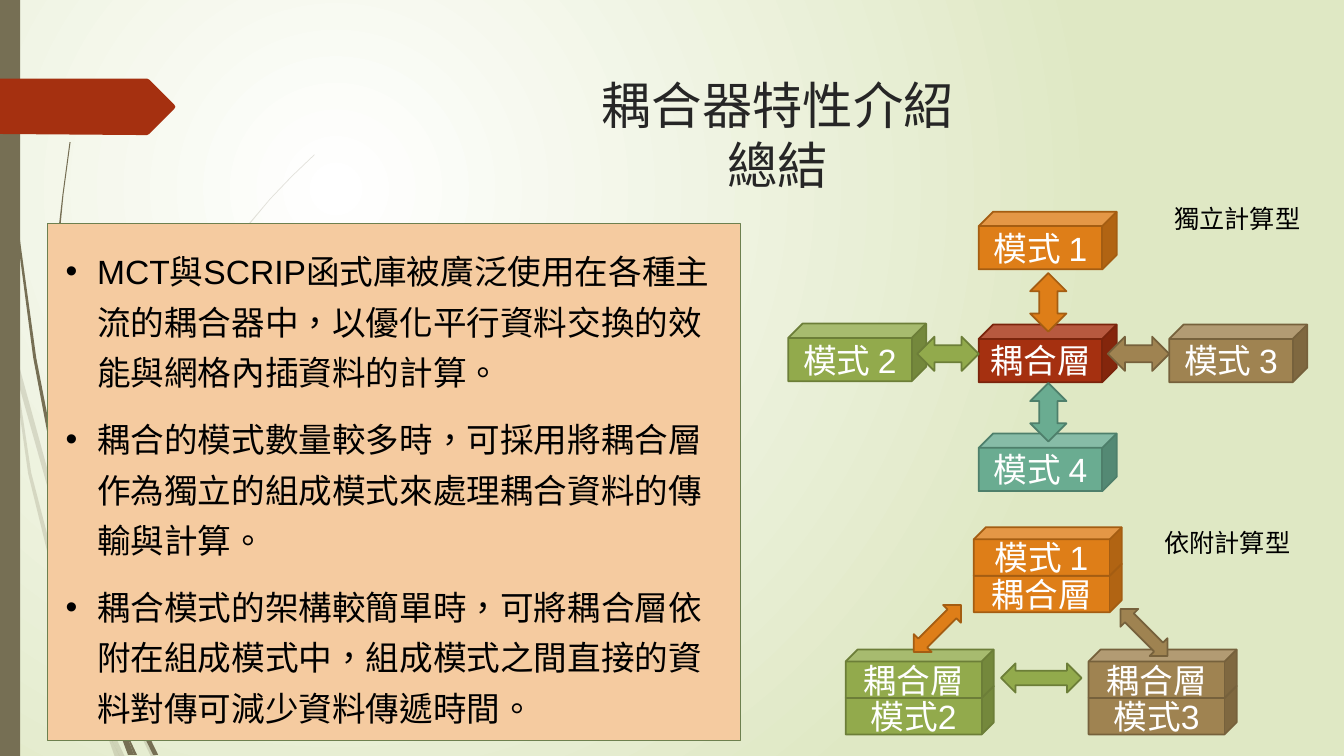
from dataclasses import dataclass

from lxml.etree import SubElement
from pptx import Presentation
from pptx.dml.color import RGBColor
from pptx.enum.lang import MSO_LANGUAGE_ID as Lang
from pptx.enum.shapes import MSO_SHAPE as Preset
from pptx.enum.text import MSO_ANCHOR as Anchor
from pptx.enum.text import MSO_AUTO_SIZE as AutoSize
from pptx.enum.text import PP_ALIGN as Align
from pptx.oxml import parse_xml
from pptx.oxml.ns import nsdecls, qn
from pptx.util import Pt


@dataclass(frozen=True)
class Theme:
    font: str = "Arial"
    title_font: str = "TeX Gyre Adventor"
    title_size: int = 36
    text_size: int = 24
    label_size: int = 18
    title: str = "262626"
    text: str = "000000"
    light: str = "FFFFFF"
    glow: str = "FFFFFF"
    backdrop: str = "DFE8C4"
    stem: str = "766F54"
    tag: str = "A53010"
    panel: tuple = ("F5CBA0", "6D804F")
    orange: tuple = ("DE7E18", "A45D12")
    green: tuple = ("92AA4C", "6C7E38")
    brown: tuple = ("9F8351", "76613C")
    teal: tuple = ("6AAC91", "4E7F6B")
    red: tuple = ("A53010", "7A240C")


THEME = Theme()
HUNDREDTH_INCH = Pt(0.72)

# Outlines in hundredths of an inch
PALE_WISPS = [
    [(11, 350), (9, 322), (0, 282), (0, 299), (10, 344)],
    [(58, 522), (84, 599), (85, 586), (62, 520), (14, 345), (17, 376)],
    [(92, 607), (88, 596), (88, 610), (123, 694), (150, 751), (155, 751), (127, 692)],
    [(119, 751), (124, 751), (105, 711)],
    [(93, 683), (70, 619), (31, 469), (17, 376), (11, 350), (28, 470), (65, 621),
     (92, 693), (101, 714), (99, 707)],
    [(88, 584), (110, 462), (160, 349), (229, 245), (268, 198), (290, 175), (312, 154),
     (312, 153), (289, 175), (268, 197), (228, 244), (158, 348), (107, 461), (85, 584),
     (85, 586), (88, 596)],
    [(101, 714), (114, 751), (119, 751)],
    [(96, 692), (93, 683), (99, 707), (101, 714), (119, 751), (105, 711)],
]
DARK_WISPS = [
    [(7, 110), (17, 233), (33, 355), (56, 477), (57, 481), (55, 457), (55, 453),
     (36, 355), (19, 232), (8, 109), (5, 48), (4, 0), (3, 0), (4, 48)],
    [(113, 649), (110, 641), (111, 656), (132, 708), (152, 749), (157, 749), (136, 706)],
    [(60, 472), (58, 453), (54, 349), (58, 245), (63, 193), (70, 141), (69, 141),
     (62, 193), (56, 245), (52, 349), (55, 449)],
    [(133, 749), (136, 749), (122, 719)],
    [(117, 722), (127, 749), (131, 749)],
    [(116, 706), (110, 691), (116, 717), (117, 722), (130, 749), (133, 749), (122, 719)],
]
TAG = [(173, 108), (148, 133), (146, 134), (136, 134), (0, 133), (0, 78), (146, 78),
       (148, 79), (173, 104), (174, 106)]

POINTS = [
    "MCT與SCRIP函式庫被廣泛使用在各種主流的耦合器中，以優化平行資料交換的效能與網格內插資料的計算。",
    "耦合的模式數量較多時，可採用將耦合層作為獨立的組成模式來處理耦合資料的傳輸與計算。",
    "耦合模式的架構較簡單時，可將耦合層依附在組成模式中，組成模式之間直接的資料對傳可減少資料傳遞時間。",
]


def place(shape, left, top, width, height):
    shape.left, shape.top = Pt(left), Pt(top)
    shape.width, shape.height = Pt(width), Pt(height)


def paint(shape, fill, line=None, weight=1.25):
    shape.shadow.inherit = False
    shape.fill.solid()
    shape.fill.fore_color.rgb = RGBColor.from_string(fill)
    if line:
        shape.line.color.rgb = RGBColor.from_string(line)
        shape.line.width = Pt(weight)
    else:
        shape.line.fill.background()


def add_run(paragraph, words, size, color, font=THEME.font):
    run = paragraph.add_run()
    run.text = words
    run.font.size = Pt(size)
    run.font.name = font
    run.font.color.rgb = RGBColor.from_string(color)
    run.font.language_id = Lang.TRADITIONAL_CHINESE


def add_block(shapes, preset, box, colors, weight=1.25):
    block = shapes.add_shape(preset, *map(Pt, box))
    paint(block, *colors, weight=weight)
    return block


def add_cube(shapes, box, words, colors):
    frame = add_block(shapes, Preset.CUBE, box, colors).text_frame
    frame.vertical_anchor = Anchor.MIDDLE
    frame.paragraphs[0].alignment = Align.CENTER
    add_run(frame.paragraphs[0], words, THEME.text_size, THEME.light)


def add_arrow(shapes, box, colors, angle=0):
    add_block(shapes, Preset.LEFT_RIGHT_ARROW, box, colors).rotation = angle


def add_label(shapes, left, top, words):
    frame = shapes.add_textbox(Pt(left), Pt(top), Pt(150.5), Pt(28.8)).text_frame
    frame.word_wrap = True
    frame.paragraphs[0].alignment = Align.CENTER
    add_run(frame.paragraphs[0], words, THEME.label_size, THEME.text)


def add_outline(shapes, corners, color, opacity=100):
    builder = shapes.build_freeform(*corners[0], scale=HUNDREDTH_INCH)
    builder.add_line_segments(corners[1:], close=True)
    outline = builder.convert_to_shape()
    paint(outline, color)
    if opacity < 100:
        tint = outline.fill._xPr.find(".//" + qn("a:srgbClr"))
        SubElement(tint, qn("a:alpha"), val=str(opacity * 1000))


def set_backdrop(slide):
    """Fill the background with a radial gradient centred in the upper left."""
    slide._element.cSld.insert(0, parse_xml(
        f'<p:bg {nsdecls("p", "a")}><p:bgPr><a:gradFill rotWithShape="1"><a:gsLst>'
        f'<a:gs pos="0"><a:srgbClr val="{THEME.glow}"/></a:gs>'
        f'<a:gs pos="100000"><a:srgbClr val="{THEME.backdrop}"/></a:gs></a:gsLst>'
        '<a:path path="circle"><a:fillToRect l="50000" t="50000" r="100000" b="100000"/>'
        '</a:path></a:gradFill><a:effectLst/></p:bgPr></p:bg>'))


def add_decoration(shapes):
    for wisp in PALE_WISPS:
        add_outline(shapes, wisp, THEME.stem, opacity=20)
    for wisp in DARK_WISPS:
        add_outline(shapes, wisp, THEME.stem)
    add_block(shapes, Preset.RECTANGLE, (0, 0, 14.4, 540), (THEME.stem,))
    add_outline(shapes, TAG, THEME.tag)


def fill_title(title):
    place(title, 204.5, 49, 702, 100.8)
    frame = title.text_frame
    frame.auto_size = AutoSize.NONE
    frame.vertical_anchor = Anchor.TOP
    heading = frame.paragraphs[0]
    heading.alignment = Align.CENTER
    add_run(heading, "耦合器特性介紹", THEME.title_size, THEME.title, THEME.title_font)
    heading.add_line_break()
    add_run(heading, "總結", THEME.title_size, THEME.title)


def fill_summary(shapes, body):
    panel = add_block(shapes, Preset.FLOWCHART_PROCESS, (33.8, 159.8, 495.4, 369.4),
                      THEME.panel, weight=0.75)
    panel._element.addnext(body._element)
    place(body, 39.6, 168.5, 478.8, 355)
    frame = body.text_frame
    frame.auto_size = AutoSize.NONE
    frame.vertical_anchor = Anchor.TOP
    for index, words in enumerate(POINTS):
        point = frame.add_paragraph() if index else frame.paragraphs[0]
        point.line_spacing = 1.25
        point.space_before = Pt(12)
        layout = point._p.get_or_add_pPr()
        layout.set("marL", str(Pt(22.5)))
        layout.set("indent", str(-Pt(22.5)))
        SubElement(layout, qn("a:buFont"), typeface=THEME.font)
        SubElement(layout, qn("a:buChar"), char="•")
        add_run(point, words, THEME.text_size, THEME.text)


def add_independent_diagram(shapes):
    for left, top, words, colors in [
        (563, 231.1, "模式 2", THEME.green),
        (699.1, 309.6, "模式 4", THEME.teal),
        (699.1, 231.8, "耦合層", THEME.red),
        (699.1, 151.2, "模式 1", THEME.orange),
        (835.2, 231.8, "模式 3", THEME.brown),
    ]:
        add_cube(shapes, (left, top, 98.6, 41.2), words, colors)
    for top, colors in [(281.5, THEME.teal), (203, THEME.orange)]:
        add_arrow(shapes, (727.9, top, 41.8, 25.9), colors, angle=90)
    for left, colors in [(655.2, THEME.green), (791.3, THEME.brown)]:
        add_arrow(shapes, (left, 240.5, 43.9, 24.5), colors)


def add_attached_diagram(shapes):
    for left, top, upper, lower, colors in [
        (695.5, 376.6, "模式 1", "耦合層", THEME.orange),
        (604.1, 463.9, "耦合層", "模式2", THEME.green),
        (777.6, 463.9, "耦合層", "模式3", THEME.brown),
    ]:
        for drop, words in [(26.1, lower), (0, upper)]:
            add_cube(shapes, (left, top + drop, 105.8, 34.6), words, colors)
    add_arrow(shapes, (645.8, 439.9, 47.5, 18), THEME.orange, angle=135)
    add_arrow(shapes, (715, 473.8, 57.6, 20.9), THEME.green)
    add_arrow(shapes, (793.4, 442.8, 47.5, 18), THEME.brown, angle=45)


def main():
    deck = Presentation()
    deck.slide_width, deck.slide_height = Pt(960), Pt(540)
    slide = deck.slides.add_slide(deck.slide_layouts[1])
    shapes = slide.shapes
    set_backdrop(slide)
    add_decoration(shapes)
    fill_title(shapes.title)
    add_independent_diagram(shapes.add_group_shape().shapes)
    add_label(shapes, 808.6, 141.8, "獨立計算型")
    add_label(shapes, 801.4, 373, "依附計算型")
    add_attached_diagram(shapes.add_group_shape().shapes)
    fill_summary(shapes, slide.placeholders[1])
    deck.save("out.pptx")


if __name__ == "__main__":
    main()
